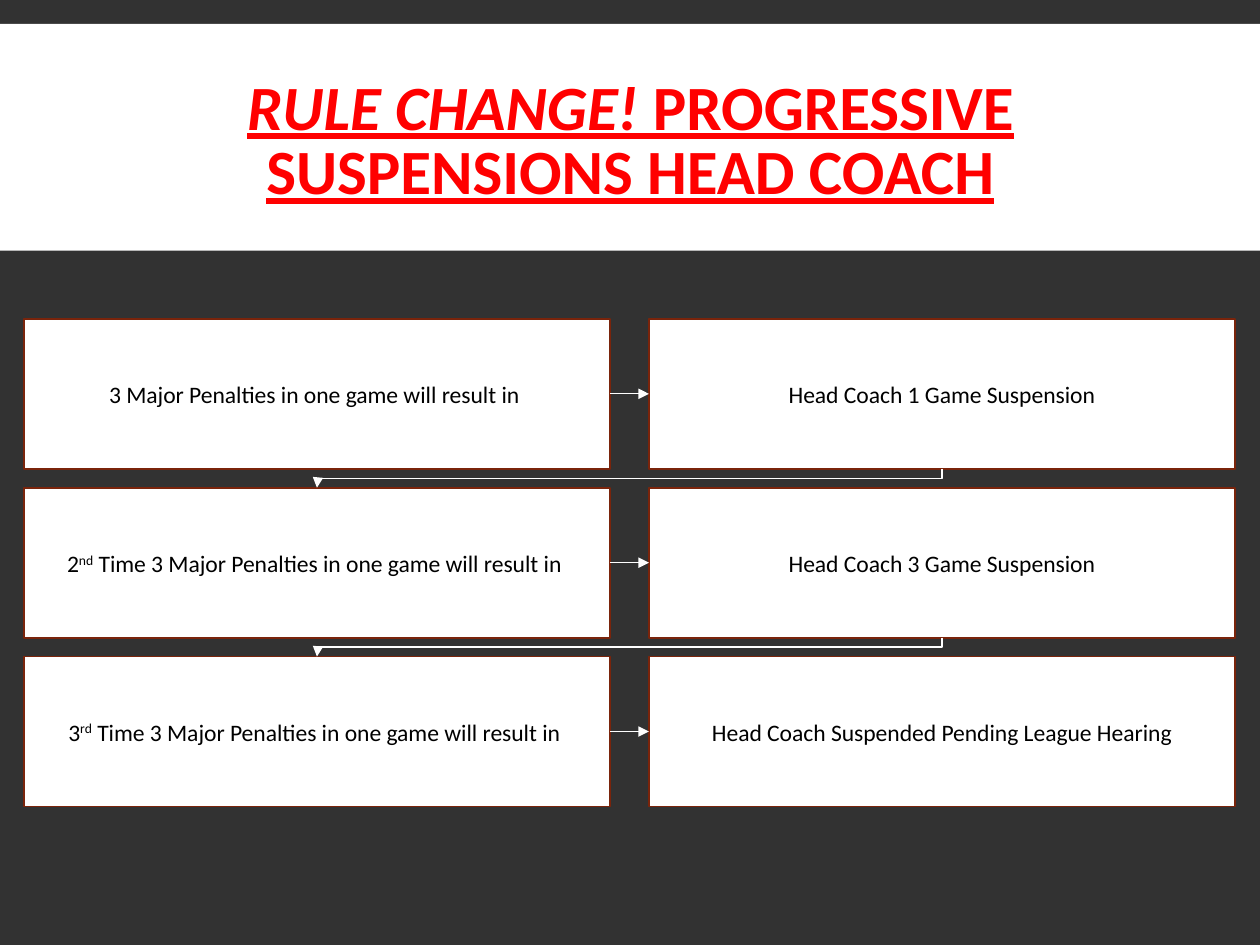
from lxml import etree
from pptx import Presentation
from pptx.dml.color import RGBColor
from pptx.enum.shapes import MSO_CONNECTOR, MSO_SHAPE
from pptx.enum.text import MSO_ANCHOR, MSO_AUTO_SIZE, PP_ALIGN
from pptx.oxml.ns import qn
from pptx.util import Pt

RECT = MSO_SHAPE.RECTANGLE
STRAIGHT, ELBOW = MSO_CONNECTOR.STRAIGHT, MSO_CONNECTOR.ELBOW
MIDDLE, CENTER = MSO_ANCHOR.MIDDLE, PP_ALIGN.CENTER
NO_FIT = MSO_AUTO_SIZE.NONE

LEFT, TOP, BOX_W, BOX_H = 13.7, 182.2, 334.8, 85.7
COL_STEP, ROW_STEP = 357.1, 96.5
TITLE_FONT = {"name": "Calibri", "size": Pt(36), "bold": True, "underline": True}
BOX_FONT = {"name": "Calibri", "size": Pt(13.5)}
AGAIN = " Time 3 Major Penalties in one game will result in "
STEPS = [
    (["3 Major Penalties in one game will result in "],
     ["Head Coach 1 Game Suspension"]),
    (["2", "nd", AGAIN], ["Head Coach 3 Game Suspension"]),
    (["3", "rd", AGAIN], ["Head Coach Suspended Pending League Hearing"]),
]


def rgb(color):
    """Turn a hex string into a colour."""
    return RGBColor.from_string(color)


def add_run(p, text, color, fmt):
    """Add a run with the given font values."""
    r = p.add_run()
    r.text = text
    r.font.color.rgb = rgb(color)
    for name, value in fmt.items():
        setattr(r.font, name, value)
    return r


def add_rect(s, x, y, w, h):
    """Add a plain white rectangle without outline or shadow."""
    sp = s.shapes.add_shape(RECT, Pt(x), Pt(y), Pt(w), Pt(h))
    sp.shadow.inherit = False
    sp.fill.solid()
    sp.fill.fore_color.rgb = rgb("FFFFFF")
    sp.line.fill.background()
    return sp


def add_title(s):
    """Place the title on its white band."""
    band = add_rect(s, 0, 13.7, 720, 129.6)
    s.shapes._spTree.insert(2, band._element)
    sp = s.shapes.title
    sp.left, sp.top, sp.width, sp.height = Pt(71.3), Pt(22.3), Pt(578), Pt(118.8)
    tf = sp.text_frame
    tf.word_wrap, tf.auto_size, tf.vertical_anchor = True, NO_FIT, MIDDLE
    p = tf.paragraphs[0]
    p.alignment, p.line_spacing = CENTER, 0.85
    add_run(p, "RULE CHANGE! ", "FF0000", {**TITLE_FONT, "italic": True})
    add_run(p, "PROGRESSIVE SUSPENSIONS HEAD COACH", "FF0000",
            {**TITLE_FONT, "italic": False})


def add_box(s, x, y, parts):
    """Add an outlined box whose second text part is superscript."""
    sp = add_rect(s, x, y, BOX_W, BOX_H)
    sp.line.color.rgb = rgb("7A240B")
    sp.line.width = Pt(1)
    tf = sp.text_frame
    tf.word_wrap, tf.vertical_anchor = True, MIDDLE
    p = tf.paragraphs[0]
    p.alignment = CENTER
    for i, text in enumerate(parts):
        r = add_run(p, text, "000000", BOX_FONT)
        if i == 1:
            r.font._element.set("baseline", "30000")


def add_arrow(s, kind, x1, y1, x2, y2):
    """Add a thin white connector with a triangle at its end."""
    cxn = s.shapes.add_connector(kind, Pt(x1), Pt(y1), Pt(x2), Pt(y2))
    cxn.line.color.rgb = rgb("FFFFFF")
    cxn.line.width = Pt(0.75)
    etree.SubElement(cxn.line._get_or_add_ln(), qn("a:tailEnd"), type="triangle")
    etree.SubElement(cxn._element.spPr, qn("a:effectLst"))
    return cxn


def add_return_arrow(s, x1, y1, x2, y2):
    """Add an elbow that leaves downwards, runs left and ends downwards."""
    cx, cy = (x1 + x2) / 2, (y1 + y2) / 2
    dx, dy = (y2 - y1) / 2, (x1 - x2) / 2
    cxn = add_arrow(s, ELBOW, cx - dx, cy - dy, cx + dx, cy + dy)
    cxn._element.spPr.find(qn("a:xfrm")).set("rot", "5400000")


def main():
    """Build the slide and save it."""
    prs = Presentation()
    prs.slide_width, prs.slide_height = Pt(720), Pt(540)
    s = prs.slides.add_slide(prs.slide_layouts[5])
    s.background.fill.solid()
    s.background.fill.fore_color.rgb = rgb("323232")
    add_title(s)
    right, mid = LEFT + COL_STEP, LEFT + BOX_W / 2
    for row, (offence, penalty) in enumerate(STEPS):
        y = TOP + row * ROW_STEP
        add_box(s, LEFT, y, offence)
        add_box(s, right, y, penalty)
        add_arrow(s, STRAIGHT, LEFT + BOX_W, y + BOX_H / 2, right, y + BOX_H / 2)
        if row:
            add_return_arrow(s, mid + COL_STEP, y - ROW_STEP + BOX_H, mid, y)
    prs.save("out.pptx")


if __name__ == "__main__":
    main()
